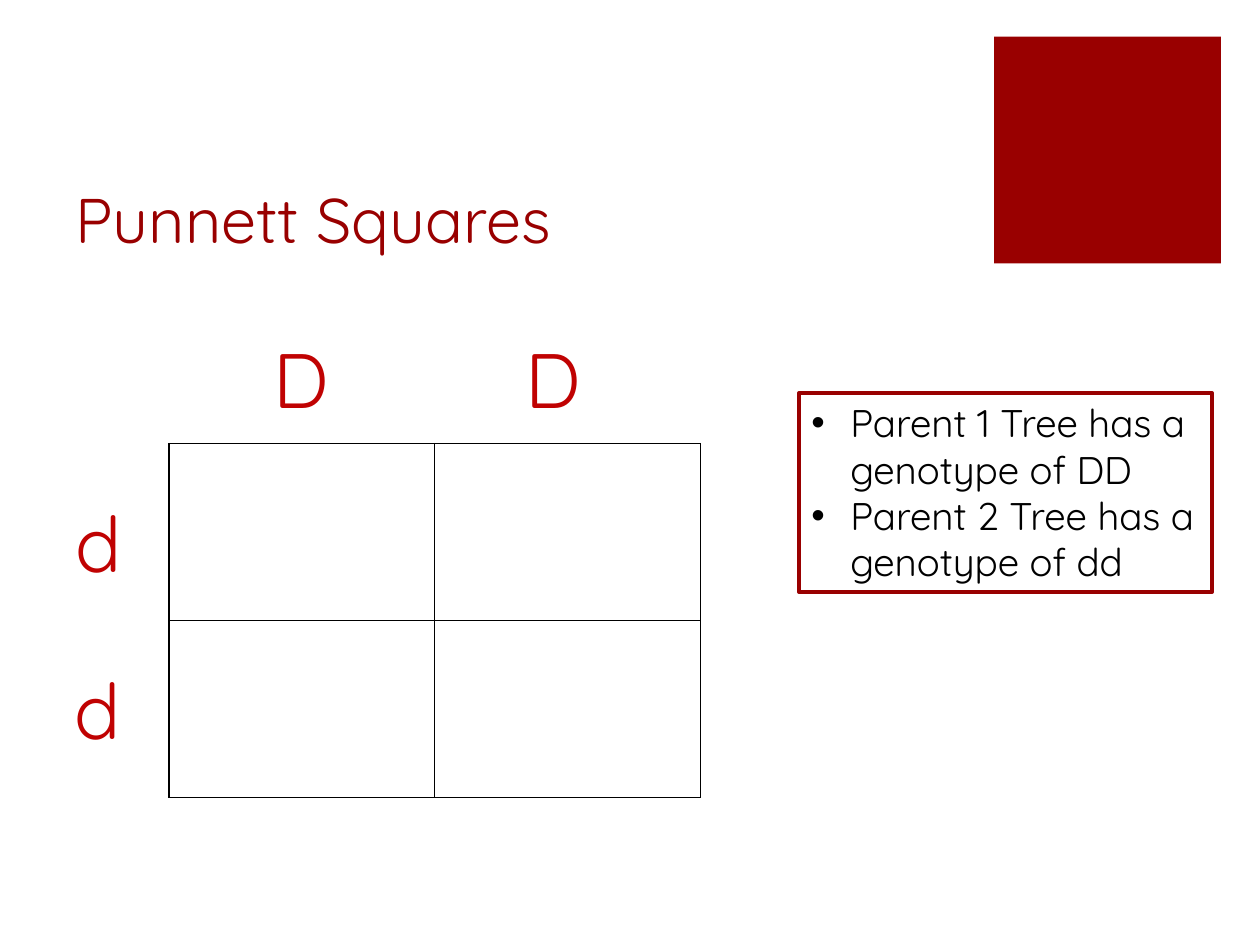
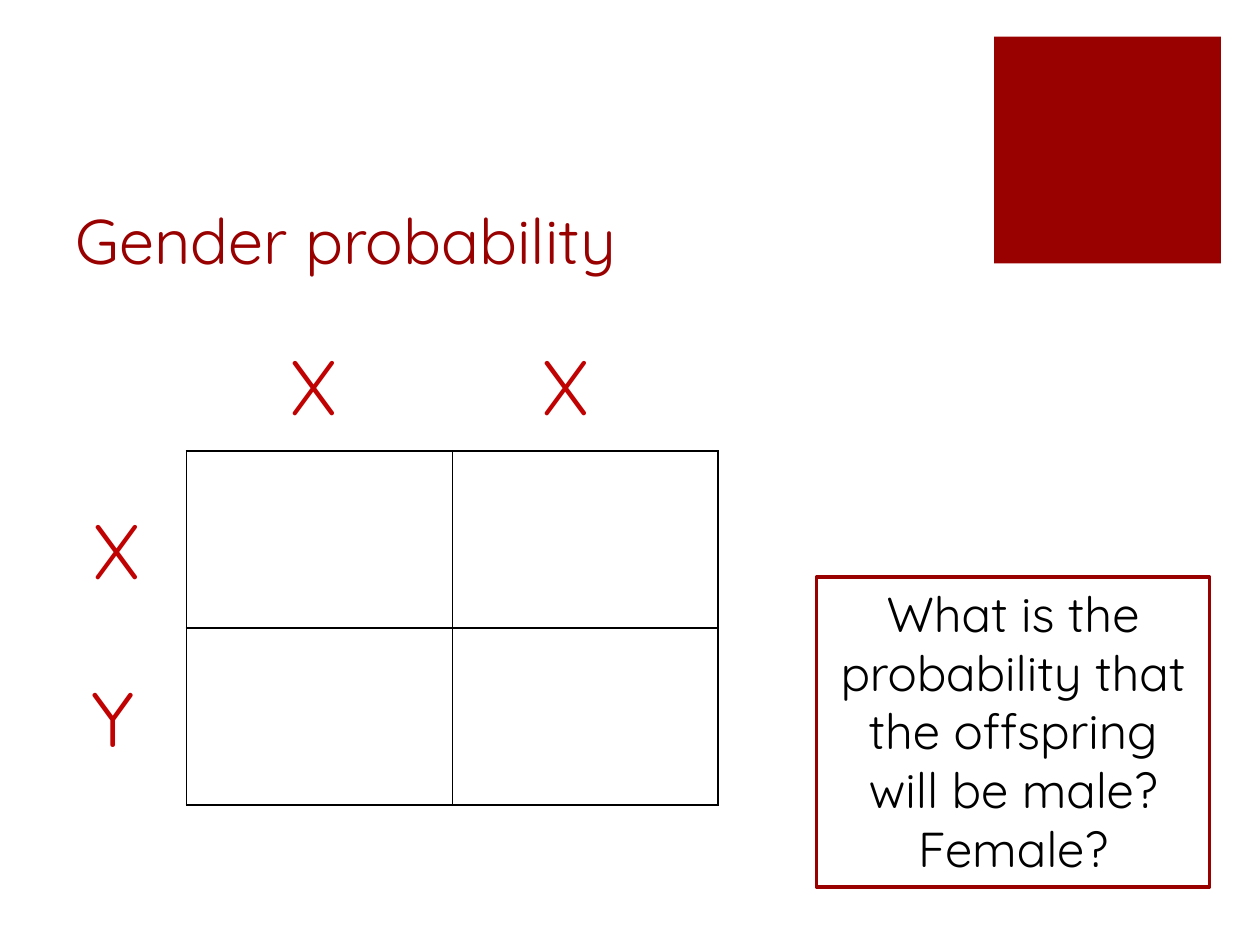
import pptx
import pptx.util
import pptx.dml.color
import pptx.enum.shapes
import pptx.enum.text
import pptx.oxml
import pptx.oxml.ns

Inches = pptx.util.Inches
Pt = pptx.util.Pt
PP_ALIGN = pptx.enum.text.PP_ALIGN
ANCHOR = pptx.enum.text.MSO_ANCHOR
AUTO_SIZE = pptx.enum.text.MSO_AUTO_SIZE
RECT = pptx.enum.shapes.MSO_SHAPE.RECTANGLE

FONT = "Quicksand"
DARK_RED = "990000"
ALLELE_RED = "C00202"
BLACK = "000000"
WHITE = "FFFFFF"
CELL_W, CELL_H = 2.11, 1.405
BORDER = (
    f'<a:{{}} {pptx.oxml.ns.nsdecls("a")} w="12700"><a:solidFill>'
    f'<a:srgbClr val="{BLACK}"/></a:solidFill></a:{{}}>'
)
BULLET = (
    f'<a:buFont {pptx.oxml.ns.nsdecls("a")} typeface="Arial"/>',
    f'<a:buChar {pptx.oxml.ns.nsdecls("a")} char="•"/>',
)


def rgb(color):
    return pptx.dml.color.RGBColor.from_string(color)


def box(x, y, w, h):
    return [Inches(v) for v in (x, y, w, h)]


def style(p, size, color, align=PP_ALIGN.LEFT):
    p.alignment = align
    p.font.name = FONT
    p.font.size = Pt(size)
    p.font.color.rgb = rgb(color)


def add_rect(s, place, fill, line=None):
    sp = s.shapes.add_shape(RECT, *box(*place))
    sp.shadow.inherit = False
    sp.fill.solid()
    sp.fill.fore_color.rgb = rgb(fill)
    if line:
        sp.line.color.rgb = rgb(line)
        sp.line.width = Pt(2)
    else:
        sp.line.fill.background()
    return sp


def add_slide(prs, title, title_y):
    s = prs.slides.add_slide(prs.slide_layouts[5])
    add_rect(s, (7.89, 0.29, 1.8, 1.8), DARK_RED)
    sp = s.shapes.title
    sp.left, sp.top, sp.width, sp.height = box(0.5, title_y, 7.12, 1.25)
    tf = sp.text_frame
    tf.text = title
    tf.auto_size = AUTO_SIZE.NONE
    tf.vertical_anchor = ANCHOR.BOTTOM
    style(tf.paragraphs[0], 36, DARK_RED)
    return s


def add_allele(s, letter, x, y):
    tf = s.shapes.add_textbox(*box(x, y, 0.71, 0.84)).text_frame
    tf.word_wrap = True
    tf.auto_size = AUTO_SIZE.SHAPE_TO_FIT_TEXT
    tf.text = letter
    style(tf.paragraphs[0], 44, ALLELE_RED)


def add_punnett_square(s, x, y, top_alleles, side_alleles):
    place = box(x, y, 2 * CELL_W, 2 * CELL_H)
    table = s.shapes.add_table(2, 2, *place).table
    table.first_row = table.horz_banding = False
    for cell in table.iter_cells():
        tcPr = cell._tc.get_or_add_tcPr()
        for side in ("lnL", "lnR", "lnT", "lnB"):
            tcPr.append(pptx.oxml.parse_xml(BORDER.format(side, side)))
        cell.fill.background()
    for i, letter in enumerate(top_alleles):
        add_allele(s, letter, x + 0.73 + 2 * i, y - 0.94)
    for i, letter in enumerate(side_alleles):
        add_allele(s, letter, x - 0.84 - 0.01 * i, y + 0.36 + 1.33 * i)


def add_note(s, place, lines, size, align=PP_ALIGN.LEFT, bullets=False):
    tf = add_rect(s, place, WHITE, DARK_RED).text_frame
    tf.word_wrap = True
    tf.auto_size = AUTO_SIZE.SHAPE_TO_FIT_TEXT
    tf.vertical_anchor = ANCHOR.TOP
    tf.text = "\n".join(lines)
    for p in tf.paragraphs:
        style(p, size, BLACK, align)
        if bullets:
            pPr = p._p.get_or_add_pPr()
            pPr.set("marL", str(Inches(0.31)))
            pPr.set("indent", str(Inches(-0.31)))
            for i, xml in enumerate(BULLET):
                pPr.insert(i, pptx.oxml.parse_xml(xml))


def main():
    prs = pptx.Presentation()
    prs.slide_width, prs.slide_height = Inches(10), Inches(7.5)

    s = add_slide(prs, "Punnett Squares", 0.83)
    add_punnett_square(s, 1.34, 3.52, "DD", "dd")
    parents = [
        "Parent 1 Tree has a genotype of DD",
        "Parent 2 Tree has a genotype of dd",
    ]
    add_note(s, (6.34, 3.12, 3.28, 1.58), parents, 22, bullets=True)

    s = add_slide(prs, "Gender probability", 1)
    add_punnett_square(s, 1.48, 3.58, "XX", "XY")
    question = ["What is the probability that the offspring will be male? Female?"]
    add_note(s, (6.48, 4.58, 3.12, 2.46), question, 28, PP_ALIGN.CENTER)

    prs.save("out.pptx")


if __name__ == "__main__":
    main()
